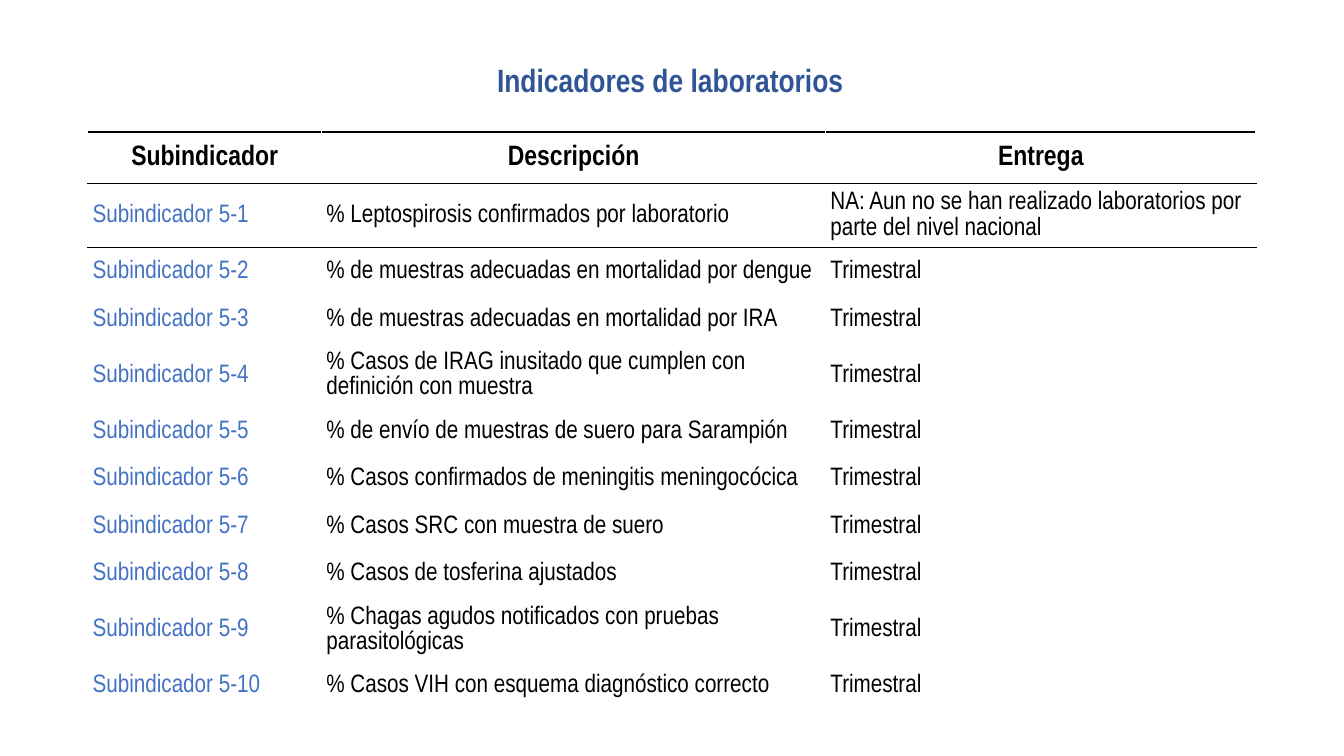
from lxml.etree import SubElement
from pptx import Presentation
from pptx.dml.color import RGBColor
from pptx.enum.text import MSO_ANCHOR, PP_ALIGN
from pptx.oxml.ns import qn
from pptx.util import Pt

HEADINGS = ("Subindicador", "Descripción", "Entrega")
DESCRIPTIONS = (
    "% Leptospirosis confirmados por laboratorio",
    "% de muestras adecuadas en mortalidad por dengue",
    "% de muestras adecuadas en mortalidad por IRA",
    "% Casos de IRAG inusitado que cumplen con definición con muestra",
    "% de envío de muestras de suero para Sarampión",
    "% Casos confirmados de meningitis meningocócica",
    "% Casos SRC con muestra de suero",
    "% Casos de tosferina ajustados",
    "% Chagas agudos notificados con pruebas parasitológicas",
    "% Casos VIH con esquema diagnóstico correcto",
)
PENDING = "NA: Aun no se han realizado laboratorios por parte del nivel nacional"
HEADER_HEIGHT, ROW_HEIGHT, TALL_HEIGHT = 36.5, 34, 46
TWO_LINE_ROWS = (1, 4, 9)
RULED_TOP, RULED_BOTTOM = (0, 1, 2), (0, 1)


def color(code):
    return RGBColor.from_string(code)


class IndicatorSlide:
    font = "Arial Narrow"
    line_spacing = 1.07
    black, white = "000000", "FFFFFF"
    title_blue, label_blue = "2F5597", "4472C4"

    def __init__(self, presentation):
        self.slide = presentation.slides.add_slide(presentation.slide_layouts[5])

    def set_text(self, frame, text, size, ink, bold=False, align=PP_ALIGN.LEFT):
        frame.text = text
        paragraph = frame.paragraphs[0]
        paragraph.alignment = align
        paragraph.line_spacing = self.line_spacing
        paragraph.space_before = Pt(0)
        for run in paragraph.runs:
            run.font.name = self.font
            run.font.size = Pt(size)
            run.font.bold = bold
            run.font.color.rgb = color(ink)

    def title(self, text, left, top, width, height):
        heading = self.slide.shapes.title
        heading.left, heading.top = Pt(left), Pt(top)
        heading.width, heading.height = Pt(width), Pt(height)
        frame = heading.text_frame
        frame.word_wrap = False
        frame.vertical_anchor = MSO_ANCHOR.TOP
        self.set_text(frame, text, 23, self.title_blue, bold=True)

    def border(self, cell, side):
        properties = cell._tc.get_or_add_tcPr()
        line = SubElement(properties, qn(f"a:{side}"), w=str(Pt(1)))
        fill = SubElement(line, qn("a:solidFill"))
        SubElement(fill, qn("a:srgbClr"), val=self.black)

    def cell(self, cell, text, row, column):
        header = row == 0
        if row in RULED_TOP:
            self.border(cell, "lnT")
        if row in RULED_BOTTOM:
            self.border(cell, "lnB")
        cell.margin_left = cell.margin_right = Pt(4.3 if header else 3.4)
        cell.margin_top = cell.margin_bottom = Pt(0)
        cell.vertical_anchor = MSO_ANCHOR.MIDDLE
        if header:
            cell.fill.solid()
            cell.fill.fore_color.rgb = color(self.white)
            self.set_text(cell.text_frame, text, 20, self.black, True, PP_ALIGN.CENTER)
        else:
            cell.fill.background()
            ink = self.black if column else self.label_blue
            self.set_text(cell.text_frame, text, 18, ink)

    def table(self, rows, left, top, widths, heights):
        indicators = self.slide.shapes.add_table(
            len(rows), len(widths), Pt(left), Pt(top), Pt(sum(widths)), Pt(sum(heights))
        ).table
        indicators.first_row = indicators.horz_banding = False
        for column, width in zip(indicators.columns, widths):
            column.width = Pt(width)
        for row, height in zip(indicators.rows, heights):
            row.height = Pt(height)
        for r, texts in enumerate(rows):
            for c, text in enumerate(texts):
                self.cell(indicators.cell(r, c), text, r, c)


def main():
    presentation = Presentation()
    presentation.slide_width, presentation.slide_height = Pt(960), Pt(540)
    rows = [HEADINGS] + [
        (f"Subindicador 5-{n}", description, PENDING if n == 1 else "Trimestral")
        for n, description in enumerate(DESCRIPTIONS, 1)
    ]
    heights = [HEADER_HEIGHT] + [
        TALL_HEIGHT if n in TWO_LINE_ROWS else ROW_HEIGHT for n in range(1, len(rows))
    ]
    indicators = IndicatorSlide(presentation)
    indicators.title("Indicadores de laboratorios", 347.8, 37.4, 264.2, 34.6)
    indicators.table(rows, 62.8, 94.3, (167, 360, 307.4), heights)
    presentation.save("out.pptx")


if __name__ == "__main__":
    main()
